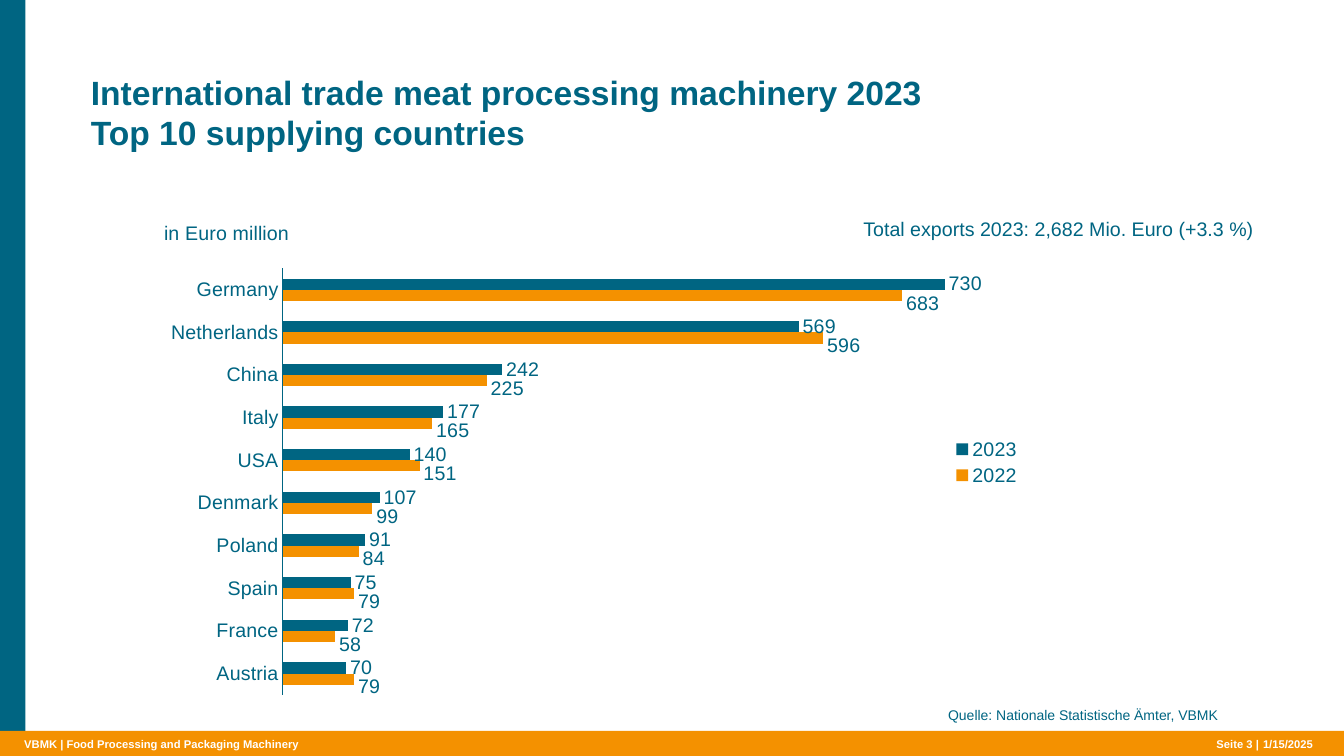
from dataclasses import dataclass

from lxml import etree
from pptx import Presentation
from pptx.chart.chart import Chart
from pptx.chart.data import CategoryChartData
from pptx.dml.color import RGBColor
from pptx.enum.chart import (
    XL_CHART_TYPE, XL_LABEL_POSITION, XL_LEGEND_POSITION, XL_TICK_MARK)
from pptx.enum.shapes import MSO_SHAPE
from pptx.enum.text import MSO_ANCHOR, PP_ALIGN
from pptx.oxml.ns import qn
from pptx.slide import Slide
from pptx.text.text import Font
from pptx.util import Cm, Pt

RECTANGLE = MSO_SHAPE.RECTANGLE
LEFT, RIGHT = PP_ALIGN.LEFT, PP_ALIGN.RIGHT
TOP, MIDDLE = MSO_ANCHOR.TOP, MSO_ANCHOR.MIDDLE
BAR_CLUSTERED = XL_CHART_TYPE.BAR_CLUSTERED
OUTSIDE_END = XL_LABEL_POSITION.OUTSIDE_END
LEGEND_RIGHT = XL_LEGEND_POSITION.RIGHT
NO_TICK = XL_TICK_MARK.NONE

FONT = "Arial"
COLORS = {"teal": "006582", "orange": "F49100", "white": "FFFFFF"}
SLIDE_WIDTH, SLIDE_HEIGHT = 33.87, 19.05
FOOTER_TOP, FOOTER_HEIGHT = 18.59, 0.33
CHART_FONT_SIZE = 14
LABEL_DROP = 0.016


@dataclass
class Band:
    left: float
    top: float
    width: float
    height: float
    color: str


@dataclass
class Label:
    lines: list[str]
    left: float
    top: float
    width: float
    height: float
    size: float
    color: str = "teal"
    bold: bool = False
    align: PP_ALIGN = LEFT
    anchor: MSO_ANCHOR = TOP
    wrap: bool = True


@dataclass
class Year:
    name: str
    color: str
    exports: list[int]


def footer(text: str, left: float, width: float, align: PP_ALIGN = LEFT) -> Label:
    return Label([text], left, FOOTER_TOP, width, FOOTER_HEIGHT, 8, "white",
                 True, align, MIDDLE, False)


BANDS = [
    Band(0, 0, 0.64, SLIDE_HEIGHT, "teal"),
    Band(0, 18.42, SLIDE_WIDTH, 0.63, "orange"),
]
LABELS = [
    Label(["International trade meat processing machinery 2023",
           "Top 10 supplying countries"], 2.29, 1.8, 25.63, 2.06, 24, bold=True),
    Label(["Total exports 2023: 2,682 Mio. Euro (+3.3 %)"],
          20.6, 5.47, 11, 0.57, CHART_FONT_SIZE, align=RIGHT),
    Label(["Quelle: Nationale Statistische Ämter, VBMK"],
          17.58, 17.81, 13.11, 0.69, 10, align=RIGHT),
    footer("VBMK", 0.61, 0.91),
    footer("| Food Processing and Packaging Machinery", 1.52, 9.78),
    footer("Seite 3 |", 30.23, 1.5, RIGHT),
    footer("1/15/2025", 31.83, 1.45),
]
COUNTRIES = ["Austria", "France", "Spain", "Poland", "Denmark", "USA", "Italy",
             "China", "Netherlands", "Germany"]
YEARS = [
    Year("2022", "orange", [79, 58, 79, 84, 99, 151, 165, 225, 596, 683]),
    Year("2023", "teal", [70, 72, 75, 91, 107, 140, 177, 242, 569, 730]),
]


def rgb(name: str) -> RGBColor:
    return RGBColor.from_string(COLORS[name])


def style_font(font: Font, size: float, color: str, bold: bool = False) -> None:
    font.name = FONT
    font.size = Pt(size)
    font.bold = bold
    font.color.rgb = rgb(color)


def add_band(page: Slide, band: Band) -> None:
    box = page.shapes.add_shape(RECTANGLE, Cm(band.left), Cm(band.top),
                                Cm(band.width), Cm(band.height))
    box.shadow.inherit = False
    box.fill.solid()
    box.fill.fore_color.rgb = rgb(band.color)
    box.line.fill.background()


def add_label(page: Slide, label: Label) -> None:
    box = page.shapes.add_textbox(Cm(label.left), Cm(label.top),
                                  Cm(label.width), Cm(label.height))
    frame = box.text_frame
    frame.margin_left = frame.margin_right = 0
    frame.margin_top = frame.margin_bottom = 0
    frame.word_wrap = label.wrap
    frame.vertical_anchor = label.anchor
    para = frame.paragraphs[0]
    para.alignment = label.align
    for number, line in enumerate(label.lines):
        if number:
            para.add_line_break()
        span = para.add_run()
        span.text = line
        style_font(span.font, label.size, label.color, label.bold)


def set_layout(parent: etree._Element, before: str | None,
               **settings: float | str) -> None:
    """Give a chart part a manual layout, placed after the child named before."""
    for old in parent.findall(qn("c:layout")):
        parent.remove(old)
    layout = etree.Element(qn("c:layout"))
    manual = etree.SubElement(layout, qn("c:manualLayout"))
    for name, value in settings.items():
        etree.SubElement(manual, qn(f"c:{name}")).set("val", str(value))
    if before is None:
        parent.insert(0, layout)
    else:
        parent.find(qn(before)).addnext(layout)


def style_axes(chart: Chart) -> None:
    countries = chart.category_axis
    countries.major_tick_mark = countries.minor_tick_mark = NO_TICK
    countries.format.line.color.rgb = rgb("teal")
    countries.format.line.width = Pt(0.75)
    style_font(countries.tick_labels.font, CHART_FONT_SIZE, "teal")
    exports = chart.value_axis
    exports.minimum_scale, exports.maximum_scale = 0, 800
    exports.has_major_gridlines = False
    exports.visible = False


def style_series(chart: Chart) -> None:
    plot = chart.plots[0]
    plot.gap_width = 182
    plot.overlap = 0
    plot.vary_by_categories = False
    for year, series in zip(YEARS, plot.series):
        series.format.fill.solid()
        series.format.fill.fore_color.rgb = rgb(year.color)
        labels = series.data_labels
        labels.show_value = True
        labels.position = OUTSIDE_END
        labels.number_format = "0"
        labels.number_format_is_linked = False
        style_font(labels.font, CHART_FONT_SIZE, "teal")
    for index in range(len(COUNTRIES)):
        label = plot.series[0].points[index].data_label
        label.position = OUTSIDE_END
        style_font(label.font, CHART_FONT_SIZE, "teal")
        set_layout(label._get_or_add_dLbl(), "c:idx", x=0, y=LABEL_DROP)


def add_export_chart(page: Slide) -> None:
    data = CategoryChartData(number_format="0")
    data.categories = COUNTRIES
    for year in YEARS:
        data.add_series(year.name, year.exports)
    chart = page.shapes.add_chart(BAR_CLUSTERED, Cm(3.99), Cm(5.33), Cm(27.71),
                                  Cm(12.47), data).chart
    style_font(chart.font, CHART_FONT_SIZE, "teal")
    style_axes(chart)
    style_series(chart)
    set_layout(chart._chartSpace.chart.plotArea, None, layoutTarget="inner",
               xMode="edge", yMode="edge", x=0.113, y=0.115, w=0.66, h=0.862)

    chart.has_title = True
    title = chart.chart_title
    span = title.text_frame.paragraphs[0].add_run()
    span.text = "in Euro million"
    style_font(span.font, CHART_FONT_SIZE, "teal")
    set_layout(title._element, "c:tx", xMode="edge", yMode="edge", x=0.002, y=0.01)

    chart.has_legend = True
    legend = chart.legend
    legend.position = LEGEND_RIGHT
    legend.include_in_layout = True
    style_font(legend.font, CHART_FONT_SIZE, "teal")
    set_layout(legend._element, "c:legendPos", xMode="edge", yMode="edge",
               x=0.72, y=0.45)


def main() -> None:
    deck = Presentation()
    deck.slide_width, deck.slide_height = Cm(SLIDE_WIDTH), Cm(SLIDE_HEIGHT)
    page = deck.slides.add_slide(deck.slide_layouts[6])
    for band in BANDS:
        add_band(page, band)
    add_export_chart(page)
    for label in LABELS:
        add_label(page, label)
    deck.save("out.pptx")


if __name__ == "__main__":
    main()
